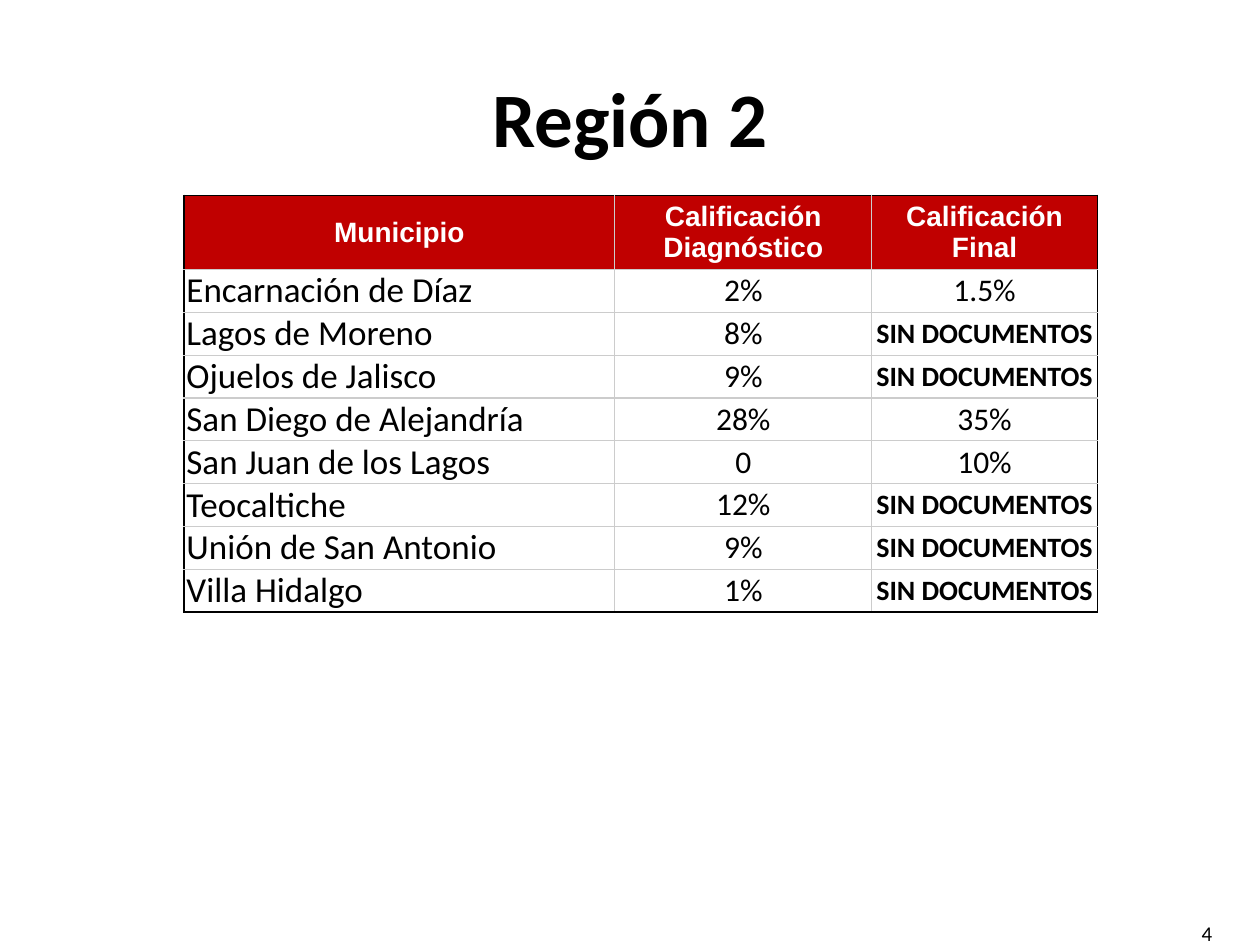
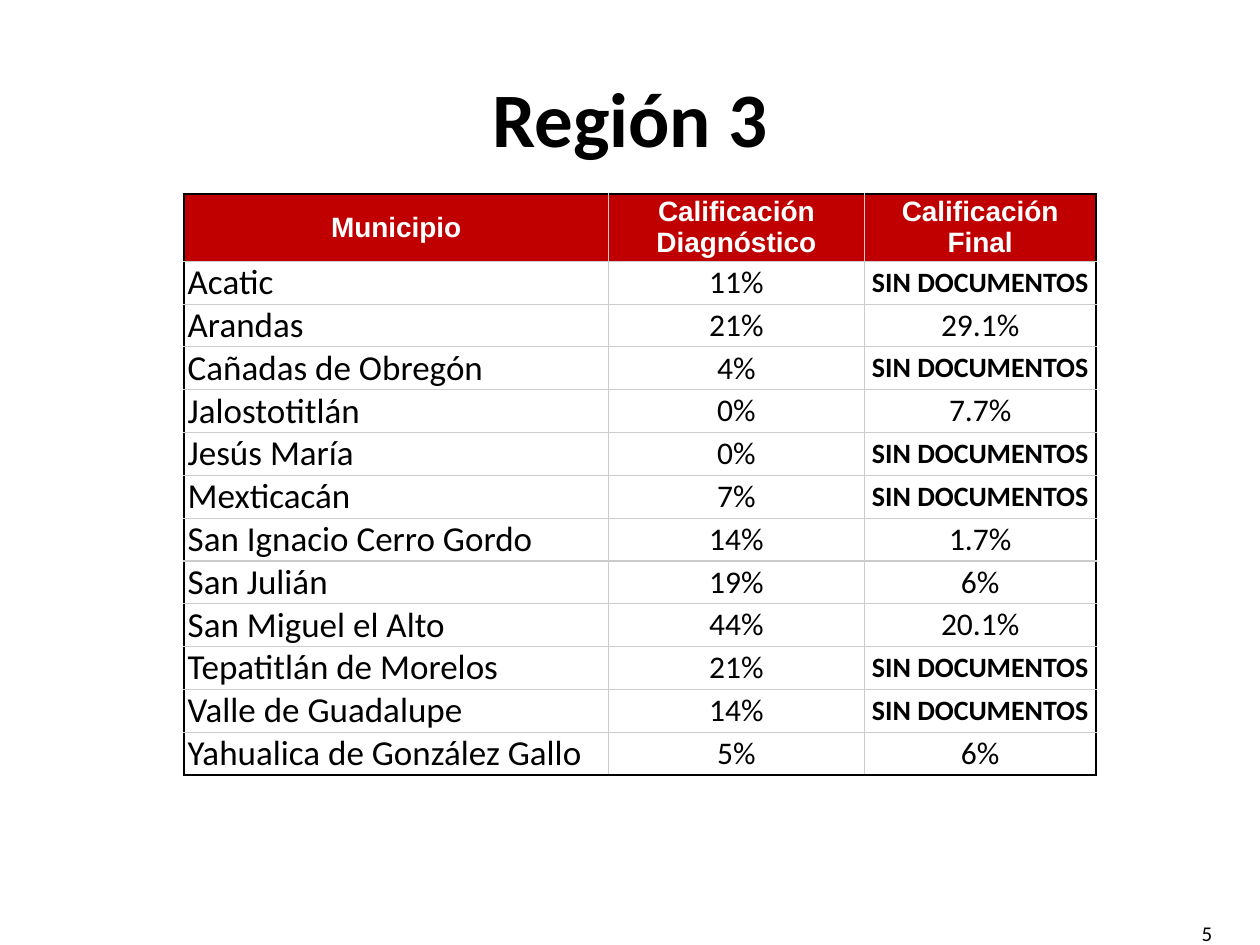
from dataclasses import dataclass

from lxml.etree import SubElement
from pptx import Presentation
from pptx.dml.color import RGBColor
from pptx.enum.text import MSO_ANCHOR as Anchor, PP_ALIGN as Align
from pptx.oxml.ns import qn
from pptx.util import Inches, Pt


@dataclass(frozen=True)
class Theme:
    ink: str = "000000"
    paper: str = "FFFFFF"
    header: str = "C00000"
    grid: str = "CCCCCC"
    body_font: str = "Calibri"
    header_font: str = "Arial"
    title_size: int = 44
    name_size: int = 20
    score_size: int = 18
    label_size: int = 16
    number_size: int = 12
    frame_width: float = 1
    grid_width: float = 0.75


@dataclass(frozen=True)
class Box:
    left: float
    top: float
    width: float
    height: float

    def lengths(self):
        return [Inches(side) for side in (self.left, self.top, self.width, self.height)]


@dataclass(frozen=True)
class Region:
    title: str
    page: str
    top: float
    column_widths: tuple
    header_height: float
    body_margin: float
    scores: tuple


THEME = Theme()
TITLE_BOX = Box(0.5, 0.3, 9, 1.25)
NUMBER_BOX = Box(7.39, 7.21, 2.33, 0.4)
TABLE_LEFT = 1.46
ROW_HEIGHT = 0.34
HEADER_MARGIN = 0.03
HEADINGS = ("Municipio", "Calificación Diagnóstico", "Calificación Final")
MISSING = "SIN DOCUMENTOS"

REGIONS = (
    Region("Región 2", "4", 1.55, (3.42, 2.04, 1.79), 0.59, 0.02, (
        ("Encarnación de Díaz", "2%", "1.5%"),
        ("Lagos de Moreno", "8%", MISSING),
        ("Ojuelos de Jalisco", "9%", MISSING),
        ("San Diego de Alejandría", "28%", "35%"),
        ("San Juan de los Lagos", "0", "10%"),
        ("Teocaltiche", "12%", MISSING),
        ("Unión de San Antonio", "9%", MISSING),
        ("Villa Hidalgo", "1%", MISSING),
    )),
    Region("Región 3", "5", 1.54, (3.37, 2.03, 1.84), 0.49, 0.03, (
        ("Acatic", "11%", MISSING),
        ("Arandas", "21%", "29.1%"),
        ("Cañadas de Obregón", "4%", MISSING),
        ("Jalostotitlán", "0%", "7.7%"),
        ("Jesús María", "0%", MISSING),
        ("Mexticacán", "7%", MISSING),
        ("San Ignacio Cerro Gordo", "14%", "1.7%"),
        ("San Julián", "19%", "6%"),
        ("San Miguel el Alto", "44%", "20.1%"),
        ("Tepatitlán de Morelos", "21%", MISSING),
        ("Valle de Guadalupe", "14%", MISSING),
        ("Yahualica de González Gallo", "5%", "6%"),
    )),
)


def write(text_frame, text, size, align, bold=False, font_name=THEME.body_font, color=THEME.ink):
    text_frame.text = text
    paragraph = text_frame.paragraphs[0]
    paragraph.alignment = align
    font = paragraph.runs[0].font
    font.name, font.size, font.bold = font_name, Pt(size), bold
    font.color.rgb = RGBColor.from_string(color)


def set_borders(cell, outer_sides):
    properties = cell._tc.get_or_add_tcPr()
    for side in "LRTB":
        outer = side in outer_sides
        width = THEME.frame_width if outer else THEME.grid_width
        line = SubElement(properties, qn(f"a:ln{side}"), w=str(Pt(width)))
        fill = SubElement(line, qn("a:solidFill"))
        SubElement(fill, qn("a:srgbClr"), val=THEME.ink if outer else THEME.grid)


def format_cell(cell, outer_sides, fill_color, margin):
    set_borders(cell, outer_sides)
    cell.fill.solid()
    cell.fill.fore_color.rgb = RGBColor.from_string(fill_color)
    cell.vertical_anchor = Anchor.MIDDLE
    cell.margin_left = cell.margin_right = Inches(margin)
    cell.margin_top = cell.margin_bottom = 0


def write_cell(cell, text, is_header, is_name):
    if is_header:
        write(cell.text_frame, text, THEME.label_size, Align.CENTER, True,
              THEME.header_font, THEME.paper)
    elif is_name:
        write(cell.text_frame, text, THEME.name_size, Align.LEFT)
    else:
        missing = text == MISSING
        size = THEME.label_size if missing else THEME.score_size
        write(cell.text_frame, text, size, Align.CENTER, missing)


def add_title(slide, box, text):
    title = slide.shapes.title
    title.left, title.top, title.width, title.height = box.lengths()
    title.text_frame.vertical_anchor = Anchor.MIDDLE
    write(title.text_frame, text, THEME.title_size, Align.CENTER, True)


def add_page_number(slide, box, text):
    text_frame = slide.shapes.add_textbox(*box.lengths()).text_frame
    text_frame.word_wrap = True
    text_frame.vertical_anchor = Anchor.MIDDLE
    write(text_frame, text, THEME.number_size, Align.RIGHT)


def add_score_table(slide, box, region):
    records = (HEADINGS, *region.scores)
    last_row, last_column = len(records) - 1, len(HEADINGS) - 1
    table = slide.shapes.add_table(len(records), len(HEADINGS), *box.lengths()).table
    table.horz_banding = False
    for column, width in zip(table.columns, region.column_widths):
        column.width = Inches(width)
    for row_index, record in enumerate(records):
        is_header = row_index == 0
        table.rows[row_index].height = Inches(region.header_height if is_header else ROW_HEIGHT)
        for column_index, text in enumerate(record):
            cell = table.cell(row_index, column_index)
            edges = {"L": column_index == 0, "R": column_index == last_column,
                     "T": is_header, "B": row_index == last_row}
            format_cell(cell, [side for side, outer in edges.items() if outer],
                        THEME.header if is_header else THEME.paper,
                        HEADER_MARGIN if is_header else region.body_margin)
            write_cell(cell, text, is_header, column_index == 0)


def add_region_slide(presentation, region):
    slide = presentation.slides.add_slide(presentation.slide_layouts.get_by_name("Title Only"))
    table_height = region.header_height + ROW_HEIGHT * len(region.scores)
    table_box = Box(TABLE_LEFT, region.top, sum(region.column_widths), table_height)
    add_page_number(slide, NUMBER_BOX, region.page)
    add_score_table(slide, table_box, region)
    add_title(slide, TITLE_BOX, region.title)


def main():
    presentation = Presentation()
    presentation.slide_width, presentation.slide_height = Inches(10), Inches(7.5)
    for region in REGIONS:
        add_region_slide(presentation, region)
    presentation.save("out.pptx")


if __name__ == "__main__":
    main()
